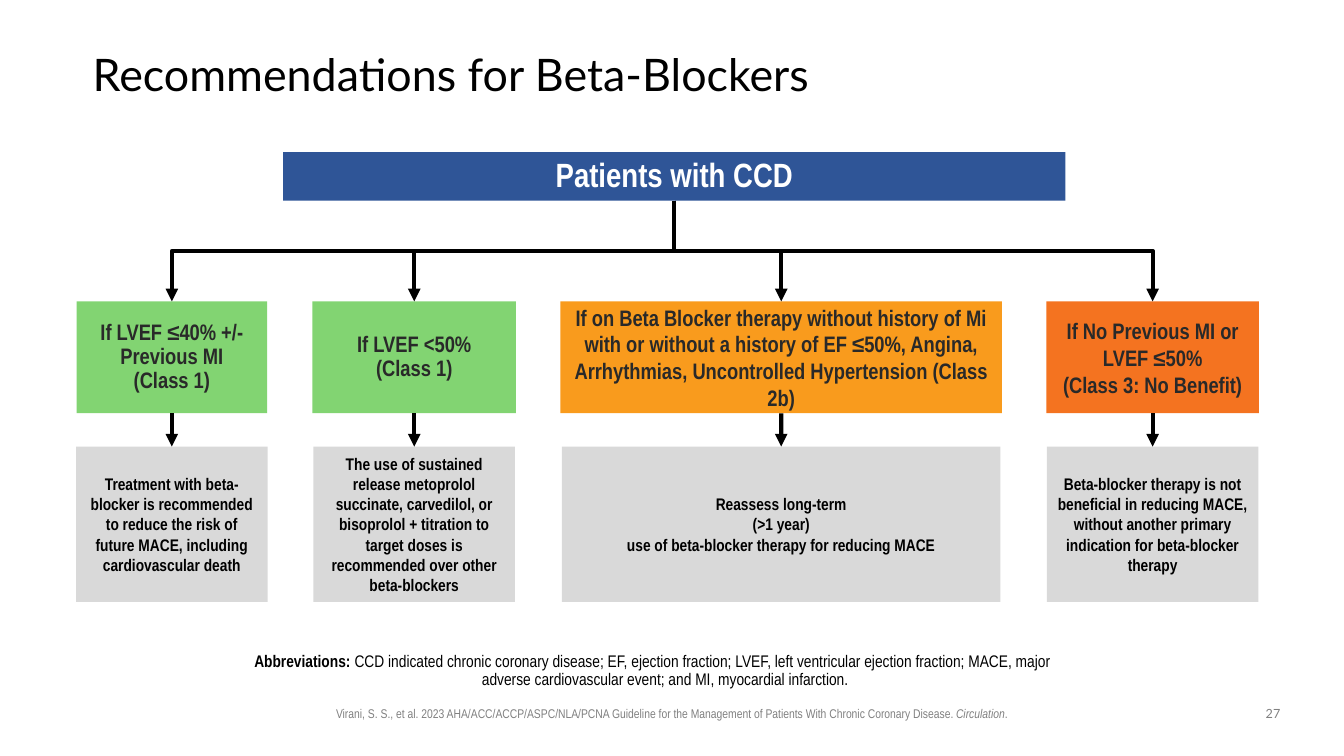
from lxml.etree import SubElement
from pptx import Presentation
from pptx.dml.color import RGBColor
from pptx.enum.shapes import MSO_CONNECTOR as CXN, MSO_SHAPE as SHP
from pptx.enum.text import MSO_ANCHOR as ANC, PP_ALIGN as AL
from pptx.oxml.ns import qn
from pptx.util import Pt

NARROW = "Arial Narrow"
BLACK, GRAY = "000000", "808080"
GREEN, AMBER, ORANGE = "82D472", "F99B1D", "F47320"
PAD = (7.2, 3.6, 7.2, 3.6)
BRANCHES = [
    (54.7, 136.1, 136.8, GREEN, 0.9,
     ["If LVEF ≤40% +/- Previous MI", "(Class 1)"],
     ["Treatment with beta-blocker is recommended to reduce the risk of future MACE, "
      "including cardiovascular death"]),
    (223.2, 145.4, 144, GREEN, 0.9,
     ["If LVEF <50%", "(Class 1)"],
     ["The use of sustained release metoprolol succinate, carvedilol, or bisoprolol + "
      "titration to target doses is recommended over other beta-blockers"]),
    (400.3, 315.4, 313.2, AMBER, 1,
     ["If on Beta Blocker therapy without history of Mi with or without a history of "
      "EF ≤50%, Angina, Arrhythmias, Uncontrolled Hypertension (Class 2b)"],
     ["Reassess long-term", "(>1 year)", "use of beta-blocker therapy for reducing MACE"]),
    (747.4, 151.9, 151.2, ORANGE, 1,
     ["If No Previous MI or LVEF ≤50%", "(Class 3: No Benefit)"],
     ["Beta-blocker therapy is not beneficial in reducing MACE, without another primary "
      "indication for beta-blocker therapy"]),
]


def rgb(value):
    """Turn a hex string into a colour."""
    return RGBColor.from_string(value)


def write(sp, lines, size, color, font=NARROW, bold=False, align=AL.CENTER,
          anchor=ANC.MIDDLE, spacing=1, pad=PAD):
    """Fill a shape with paragraphs that share one style; return its text frame."""
    tf = sp.text_frame
    tf.word_wrap = True
    tf.vertical_anchor = anchor
    tf.margin_left, tf.margin_top, tf.margin_right, tf.margin_bottom = map(Pt, pad)
    for i, line in enumerate(lines):
        p = tf.add_paragraph() if i else tf.paragraphs[0]
        p.alignment, p.line_spacing = align, spacing
        for text in [line] if isinstance(line, str) else line:
            p.add_run().text = text
        p.font.name, p.font.size, p.font.bold = font, Pt(size), bold
        p.font.color.rgb = rgb(color)
    return tf


def text_box(s, box, lines, size, color, **style):
    """Add a text box and return its text frame."""
    return write(s.shapes.add_textbox(*map(Pt, box)), lines, size, color, **style)


def block(s, box, fill, lines, size, color, **style):
    """Add a filled rectangle with bold centred text."""
    sp = s.shapes.add_shape(SHP.RECTANGLE, *map(Pt, box))
    sp.shadow.inherit = False
    sp.fill.solid()
    sp.fill.fore_color.rgb = rgb(fill)
    sp.line.fill.background()
    write(sp, lines, size, color, bold=True, **style)
    return sp


def arrow(s, kind, upper, lower):
    """Join the bottom of one box to the top of another with an arrow."""
    x1, y1 = upper.left + upper.width // 2, upper.top + upper.height
    x2, y2 = lower.left + lower.width // 2, lower.top
    c = s.shapes.add_connector(kind, x1, y1, x2, y2)
    c.begin_connect(upper, 2)
    c.end_connect(lower, 0)
    c.line.width = Pt(3)
    c.line.color.rgb = rgb(BLACK)
    SubElement(c.line._get_or_add_ln(), qn("a:tailEnd"), type="triangle")
    SubElement(c._element.spPr, qn("a:effectLst"))
    if kind == CXN.ELBOW:
        c.width, c.height = y2 - y1, abs(x2 - x1)
        c.left, c.top = (x1 + x2 - c.width) // 2, (y1 + y2 - c.height) // 2
        xfrm = c._element.spPr.find(qn("a:xfrm"))
        xfrm.set("rot", "16200000" if x2 > x1 else "5400000")
        xfrm.set("flipH", "1" if x2 > x1 else "0")


def branch(s, root, left, width, advice_width, fill, spacing, criteria, advice):
    """Draw one column: criteria box, advice box and the arrows leading to them."""
    top = block(s, (left, 215.3, width, 79.9), fill, criteria, 16, "292929",
                spacing=spacing)
    advice_left = left + (width - advice_width) / 2
    low = block(s, (advice_left, 319, advice_width, 110.9), "D9D9D9", advice, 12, BLACK)
    arrow(s, CXN.ELBOW, root, top)
    arrow(s, CXN.STRAIGHT, top, low)


def flowchart(s):
    """Draw the root box and its four branches."""
    root = block(s, (202.3, 108.7, 558.7, 34.6), "2F5597", ["Patients with CCD"], 24,
                 "FFFFFF", spacing=0.9, pad=(0, 0, 0, 0))
    for column in BRANCHES:
        branch(s, root, *column)


def footer(s):
    """Add the abbreviations, the citation and the slide number."""
    tf = text_box(s, (181.4, 463, 576.7, 31), [[
        "Abbreviations: ",
        "CCD indicated chronic coronary disease; EF, ejection fraction; LVEF, left "
        "ventricular ejection fraction; MACE, major adverse cardiovascular event; and "
        "MI, myocardial infarction."]], 12, BLACK, anchor=ANC.TOP, spacing=0.9,
        pad=(0, 3.6, 7.2, 3.6))
    p = tf.paragraphs[0]
    p.runs[0].font.bold = True
    pPr = p._p.get_or_add_pPr()
    pPr.set("marL", str(Pt(18)))
    pPr.set("indent", str(Pt(-18)))
    tf = text_box(s, (211.7, 500.4, 536.4, 18), [[
        "Virani, S. S., et al. 2023 AHA/ACC/ACCP/ASPC/NLA/PCNA Guideline for the "
        "Management of Patients With Chronic Coronary Disease. ",
        "Circulation", "."]], 9, GRAY, anchor=ANC.TOP)
    tf.paragraphs[0].runs[1].font.italic = True
    text_box(s, (894.2, 500.4, 30.2, 18.7), ["27"], 9, GRAY, font="Lato", anchor=ANC.TOP)


def main():
    """Build the slide and save it."""
    prs = Presentation()
    prs.slide_width, prs.slide_height = Pt(960), Pt(540)
    s = prs.slides.add_slide(prs.slide_layouts[6])
    text_box(s, (66.2, 28.8, 790.6, 51.8), ["Recommendations for Beta-Blockers"], 32,
             BLACK, font="Lato", align=AL.LEFT, spacing=0.9, pad=(0, 0, 0, 0))
    flowchart(s)
    footer(s)
    prs.save("out.pptx")


if __name__ == "__main__":
    main()
